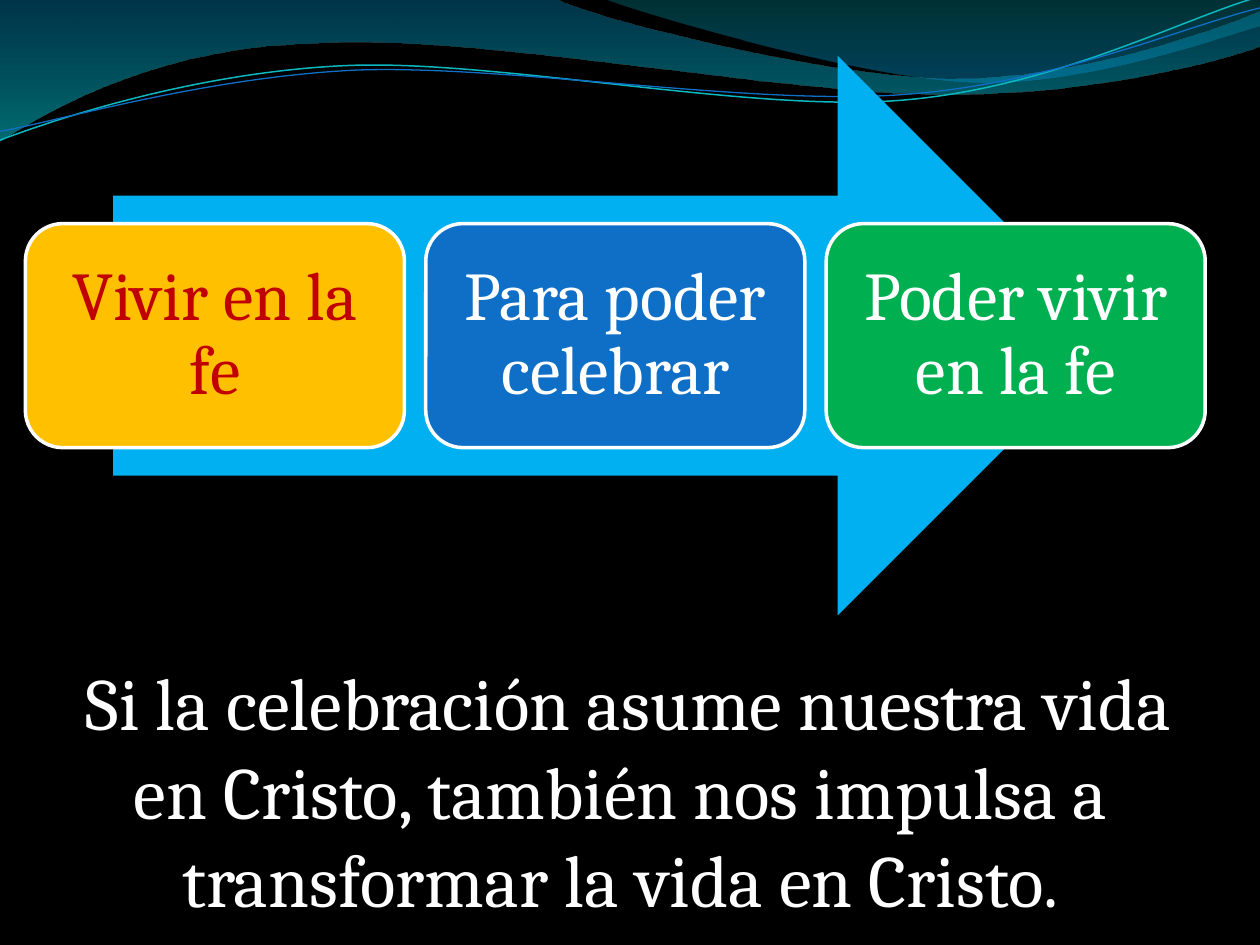
"""Build a slide with a wave header, a three-step arrow and a closing sentence."""
from dataclasses import dataclass

from lxml import etree
from pptx import Presentation
from pptx.dml.color import RGBColor
from pptx.enum import shapes, text
from pptx.oxml import ns
from pptx.util import Pt


@dataclass(frozen=True)
class Theme:
    font: str = "Cambria"
    step_size: float = 39
    closing_size: float = 42
    background: str = "000000"
    white: str = "FFFFFF"
    red: str = "C00000"
    arrow: str = "00B0F0"
    amber: str = "FFC000"
    blue: str = "0F6FC6"
    green: str = "00B050"
    teal: str = "0AB8BF"
    wave_back: tuple = ((0, "0074A1", 45), (1, "00C6CF", 55))
    wave_front: tuple = ((0, "00A1A9", 30), (0.8, "008BBF", 45))


def add_curve(page, start, segments, closed):
    """Draw line segments (2 numbers) and Bezier segments (6 numbers)."""
    points = [(Pt(x), Pt(y)) for segment in segments for x, y in zip(segment[::2], segment[1::2])]
    builder = page.shapes.build_freeform(Pt(start[0]), Pt(start[1]))
    builder.add_line_segments(points, close=closed)
    curve = builder.convert_to_shape()
    curve.shadow.inherit = False
    lines = iter(curve.element.findall(".//" + ns.qn("a:lnTo")))
    for segment in segments:
        first = next(lines)
        if len(segment) == 6:
            bezier = etree.Element(ns.qn("a:cubicBezTo"))
            first.addprevious(bezier)
            for line in (first, next(lines), next(lines)):
                bezier.append(line[0])
                line.getparent().remove(line)
    return curve


def style_text(box, words, size, color):
    """Fill a box with one centred paragraph."""
    frame = box.text_frame
    frame.text = words
    frame.word_wrap = True
    frame.auto_size = text.MSO_AUTO_SIZE.NONE
    para = frame.paragraphs[0]
    para.alignment = text.PP_ALIGN.CENTER
    para.space_before = Pt(0)
    span = para.runs[0]
    span.font.name = theme.font
    span.font.size = Pt(size)
    span.font.color.rgb = RGBColor.from_string(color)
    return para


theme = Theme()
deck = Presentation()
deck.slide_width, deck.slide_height = Pt(720), Pt(540)
page = deck.slides.add_slide(deck.slide_layouts[0])
page.background.fill.solid()
page.background.fill.fore_color.rgb = RGBColor.from_string(theme.background)
title = page.shapes.title
title.element.getparent().remove(title.element)

waves = [
    ((0, 0), [(317, -0.7), (343, 12, 478, 45, 546, 45), (614, 45, 690, 19, 720, 6.5),
              (720.7, 26), (708, 32, 626, 55, 537, 54), (447, 54, 275, 20, 185, 24.5),
              (93, 26, 33, 60, -0.7, 81), (0, 0)], theme.wave_back),
    ((345, -0.7), [(367, 8, 491, 44.5, 554, 47), (616, 50, 692, 23, 720, 15), (720, 0),
                   (345, -0.7)], theme.wave_front),
]
for start, segments, stops in waves:
    wave = add_curve(page, start, segments, True)
    wave.line.fill.background()
    wave.fill.gradient()
    wave.fill.gradient_angle = 270
    for stop, (position, color, opacity) in zip(wave.fill.gradient_stops, stops):
        stop.position = position
        stop.color.rgb = RGBColor.from_string(color)
    colors = wave.element.spPr.findall(".//" + ns.qn("a:gs") + "/" + ns.qn("a:srgbClr"))
    for node, (position, color, opacity) in zip(colors, stops):
        etree.SubElement(node, ns.qn("a:alpha"), val=str(opacity * 1000))

strands = [
    ((-1.4, 63.1), [(33.7, 51.7, 114.3, 29.4, 199.4, 29.9),
                    (284.4, 30.5, 425.9, 67.2, 512.1, 64.7),
                    (599.3, 62.3, 676.1, 25.9, 720.1, 15.4)], theme.teal, 0.85),
    ((-1.1, 58.1), [(33.2, 53.7, 118.2, 32.6, 204.3, 32.7),
                    (290.3, 33.7, 429.1, 63.8, 515.3, 61.4),
                    (601.4, 59.4, 677.9, 29.9, 721.4, 21.5)], theme.blue, 0.75),
]
for start, segments, color, width in strands:
    strand = add_curve(page, start, segments, False)
    strand.rotation = 357.3
    strand.fill.background()
    strand.line.color.rgb = RGBColor.from_string(color)
    strand.line.width = Pt(width)

closing = page.placeholders[1]
closing.left, closing.top, closing.width, closing.height = Pt(31), Pt(372), Pt(652), Pt(136)
style_text(closing, " Si la celebración asume nuestra vida en Cristo, también nos impulsa a "
           "transformar la vida en Cristo.", theme.closing_size, theme.white)
closing.element.find(".//" + ns.qn("a:pPr")).set("marR", str(Pt(3.6)))
frame = closing.text_frame
frame.vertical_anchor = text.MSO_ANCHOR.TOP
frame.margin_left, frame.margin_right = Pt(0), Pt(1.4)

arrow = page.shapes.add_shape(shapes.MSO_SHAPE.RIGHT_ARROW, Pt(64.6), Pt(31.8), Pt(574), Pt(320))
arrow.shadow.inherit = False
arrow.fill.solid()
arrow.fill.fore_color.rgb = RGBColor.from_string(theme.arrow)
arrow.line.fill.background()

steps = [
    ("Vivir en la fe", theme.amber, theme.red),
    ("Para poder celebrar", theme.blue, theme.white),
    ("Poder vivir en la fe", theme.green, theme.white),
]
for index, (words, fill, color) in enumerate(steps):
    box = page.shapes.add_shape(shapes.MSO_SHAPE.ROUNDED_RECTANGLE,
                                Pt(14.5 + 228.8 * index), Pt(127.8), Pt(216.6), Pt(128))
    box.shadow.inherit = False
    box.fill.solid()
    box.fill.fore_color.rgb = RGBColor.from_string(fill)
    box.line.color.rgb = RGBColor.from_string(theme.white)
    box.line.width = Pt(2)
    para = style_text(box, words, theme.step_size, color)
    para.line_spacing = 0.9
    frame = box.text_frame
    frame.vertical_anchor = text.MSO_ANCHOR.MIDDLE
    frame.margin_left = frame.margin_right = Pt(11.5)
    frame.margin_top = frame.margin_bottom = Pt(11.5)

deck.save("out.pptx")
